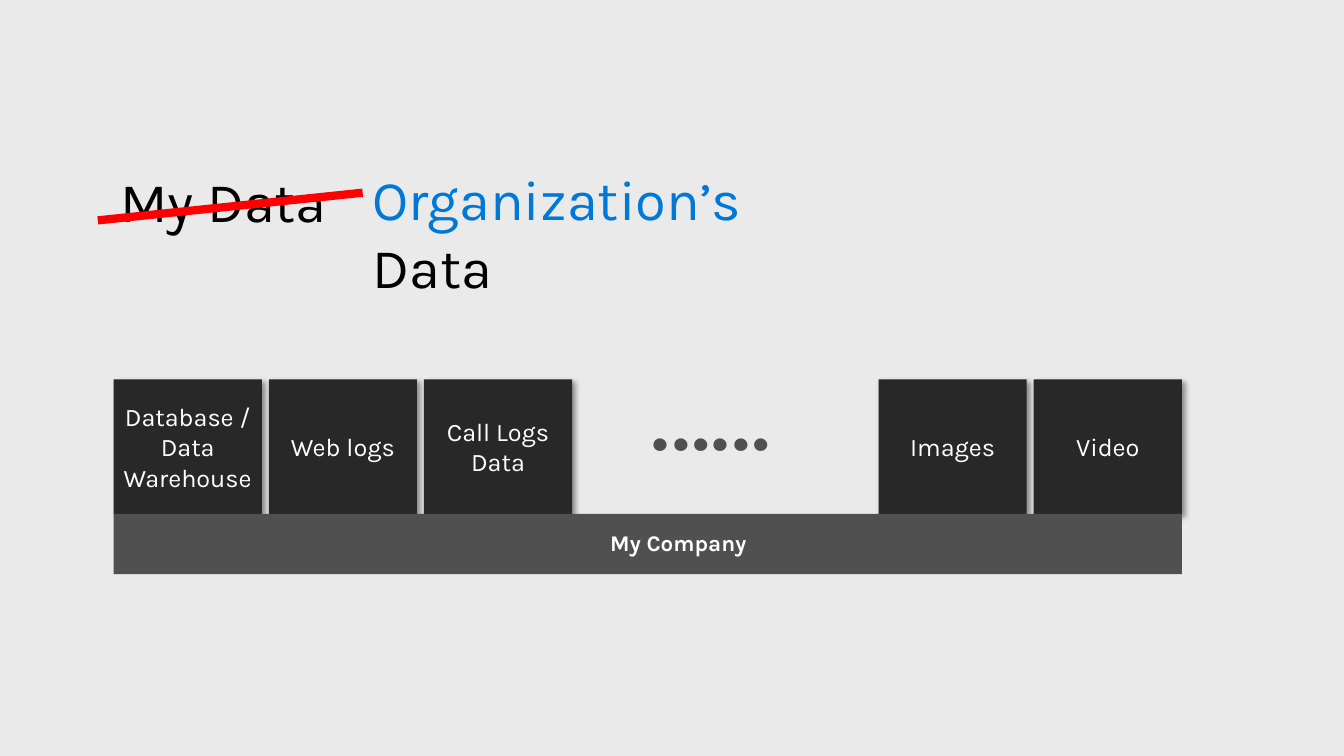
"""Build the slide on an organization's data: a row of data sources on a company bar."""
from lxml import etree
from pptx import Presentation
from pptx.dml.color import RGBColor
from pptx.enum.shapes import MSO_CONNECTOR as CONN, MSO_SHAPE as SHAPE
from pptx.enum.text import MSO_ANCHOR as ANCHOR, MSO_AUTO_SIZE as AUTO, PP_ALIGN as ALIGN
from pptx.oxml import parse_xml
from pptx.oxml.ns import nsdecls, qn
from pptx.util import Inches, Pt

BLACK = RGBColor(0x00, 0x00, 0x00)
WHITE = RGBColor(0xFF, 0xFF, 0xFF)
PALE = RGBColor(0xEA, 0xEA, 0xEA)
DARK = RGBColor(0x28, 0x28, 0x28)
GREY = RGBColor(0x50, 0x50, 0x50)
BLUE = RGBColor(0x00, 0x78, 0xD7)
RED = RGBColor(0xFF, 0x00, 0x00)

LEFT, TOP = 1.15, 3.84
BLOCK_W, BLOCK_H, PITCH = 1.5, 1.36, 1.57
BAR_W, BAR_H = 10.81, 0.61
LAST = LEFT + BAR_W - BLOCK_W
SHADOW = (f'<a:effectLst {nsdecls("a")}><a:outerShdw blurRad="{Pt(4)}" dist="{Pt(3)}" '
          'dir="2700000" algn="tl" rotWithShape="0"><a:srgbClr val="000000">'
          '<a:alpha val="40000"/></a:srgbClr></a:outerShdw></a:effectLst>')


def write(sp, *runs, size, align=ALIGN.LEFT, anchor=ANCHOR.TOP, wrap=True, bold=False):
    tf = sp.text_frame
    tf.word_wrap = wrap
    tf.vertical_anchor = anchor
    p = tf.paragraphs[0]
    p.alignment = align
    for text, color in runs:
        r = p.add_run()
        r.text = text
        r.font.name = "Karla"
        r.font.size = Pt(size)
        r.font.bold = bold
        r.font.color.rgb = color
    return tf


def add_box(x, y, w, h, color):
    sp = s.shapes.add_shape(SHAPE.RECTANGLE, Inches(x), Inches(y), Inches(w), Inches(h))
    sp.shadow.inherit = False
    sp.fill.solid()
    sp.fill.fore_color.rgb = color
    sp.line.fill.background()
    return sp


prs = Presentation()
prs.slide_width, prs.slide_height = Inches(13.6), Inches(7.65)
s = prs.slides.add_slide(prs.slide_layouts[6])
s.background.fill.solid()
s.background.fill.fore_color.rgb = PALE

sources = [
    (LEFT, "Database / Data Warehouse"),
    (LEFT + PITCH, "Web logs"),
    (LEFT + 2 * PITCH, "Call Logs Data"),
    (LAST - PITCH, "Images"),
    (LAST, "Video"),
]
for x, name in sources:
    sp = add_box(x, TOP, BLOCK_W, BLOCK_H, DARK)
    sp_pr = sp._element.spPr
    sp_pr.replace(sp_pr.find(qn("a:effectLst")), parse_xml(SHADOW))
    tf = write(sp, (name, WHITE), size=18.4, align=ALIGN.CENTER, anchor=ANCHOR.MIDDLE)
    tf.margin_left = tf.margin_right = Inches(0.05)

add_box(LEFT, TOP + BLOCK_H, BAR_W, BAR_H, GREY)

labels = [
    ((1.12, 1.64, 2.37, 0.8), [("My Data", BLACK)], dict(size=40.8, wrap=False)),
    ((3.67, 1.62, 5.27, 0.8), [("Organization’s", BLUE), (" Data", BLACK)], dict(size=40.8)),
    ((6.48, 3.38, 2.18, 1.5), [("……", GREY)], dict(size=81.6)),
    ((6.06, 5.31, 1.61, 0.38), [("My Company", WHITE)],
     dict(size=16.3, align=ALIGN.CENTER, bold=True)),
]
for place, runs, style in labels:
    sp = s.shapes.add_textbox(*map(Inches, place))
    tf = write(sp, *runs, **style)
    tf.auto_size = AUTO.SHAPE_TO_FIT_TEXT
    if len(runs) > 1:
        tf.margin_right = Inches(0.6)

strike = s.shapes.add_connector(CONN.STRAIGHT, Inches(0.99), Inches(2.23), Inches(3.67), Inches(1.95))
strike.line.color.rgb = RED
strike.line.width = Pt(6)
etree.SubElement(strike._element.spPr, qn("a:effectLst"))

prs.save("out.pptx")
